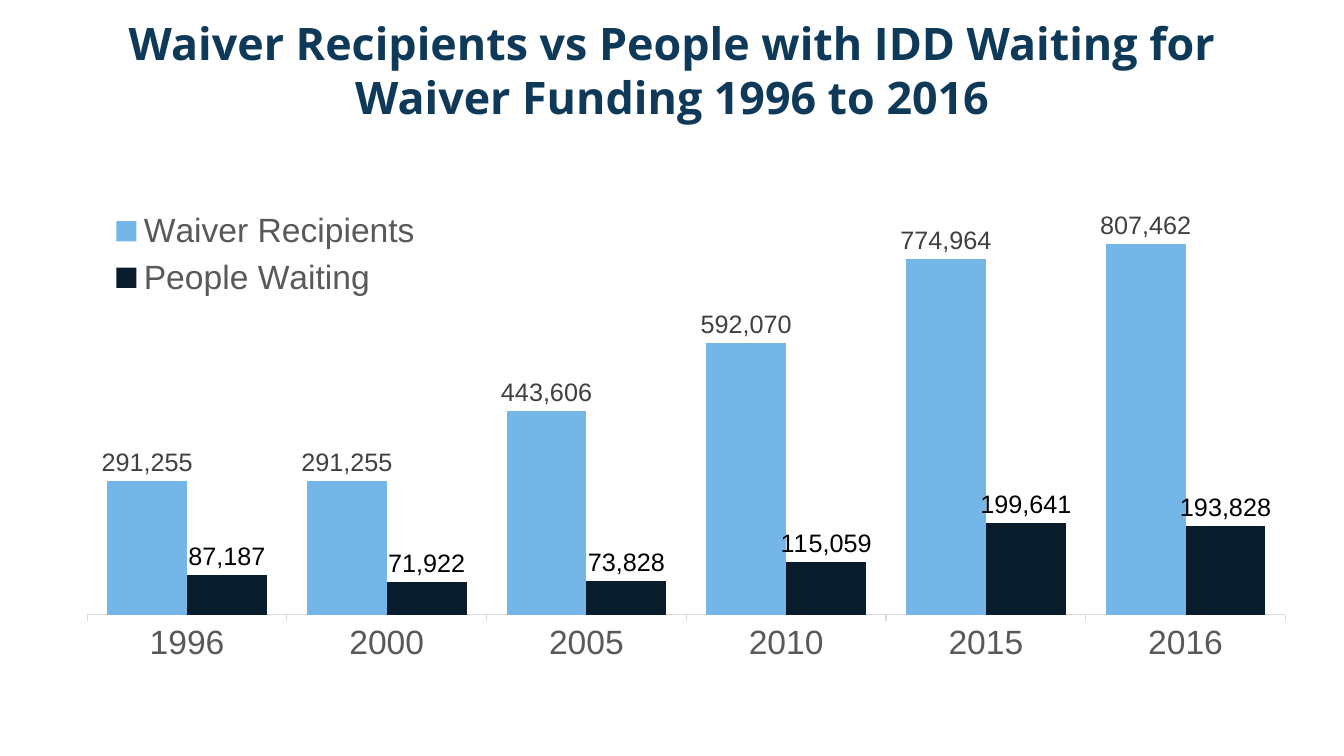
"""Build the slide comparing waiver recipients with people waiting for funding."""
from dataclasses import dataclass

from lxml.etree import SubElement
from pptx import Presentation
from pptx.chart.chart import Chart
from pptx.chart.data import CategoryChartData
from pptx.dml.color import RGBColor
from pptx.enum.chart import XL_CHART_TYPE as ChartType
from pptx.enum.chart import XL_LABEL_POSITION as LabelPosition
from pptx.enum.chart import XL_LEGEND_POSITION as LegendPosition
from pptx.enum.chart import XL_TICK_MARK as TickMark
from pptx.enum.text import MSO_ANCHOR as Anchor
from pptx.enum.text import PP_ALIGN as Align
from pptx.oxml.ns import qn
from pptx.slide import Slide
from pptx.text.text import Font
from pptx.util import Pt

YEARS = ("1996", "2000", "2005", "2010", "2015", "2016")
GRAY = "595959"


@dataclass(frozen=True)
class Box:
    left: float
    top: float
    width: float
    height: float


@dataclass(frozen=True)
class Group:
    name: str
    people: tuple[int, ...]
    fill: str
    label_color: str


GROUPS = (
    Group("Waiver Recipients", (291255, 291255, 443606, 592070, 774964, 807462), "74B6E8", "404040"),
    Group("People Waiting", (87187, 71922, 73828, 115059, 199641, 193828), "081C2C", "000000"),
)


def rgb(color: str) -> RGBColor:
    return RGBColor.from_string(color)


def style_font(font: Font, size: float, color: str, name: str = "Arial", bold: bool = False) -> None:
    font.size = Pt(size)
    font.name = name
    font.bold = bold
    font.color.rgb = rgb(color)


def add_text(slide: Slide, text: str, box: Box, *, size: float, color: str, name: str, bold: bool) -> None:
    shape = slide.shapes.add_textbox(Pt(box.left), Pt(box.top), Pt(box.width), Pt(box.height))
    frame = shape.text_frame
    frame.word_wrap = True
    frame.vertical_anchor = Anchor.MIDDLE
    paragraph = frame.paragraphs[0]
    paragraph.alignment = Align.CENTER
    run = paragraph.add_run()
    run.text = text
    style_font(run.font, size, color, name, bold)


def place_in_chart(chart: Chart, tag: str, box: Box, inner: bool = False) -> None:
    parent = chart.element.find(".//" + qn(tag))
    for layout in parent.findall(qn("c:layout")):
        parent.remove(layout)
    layout = SubElement(parent, qn("c:layout"))
    manual = SubElement(layout, qn("c:manualLayout"))
    settings = {"layoutTarget": "inner"} if inner else {}
    settings |= {"xMode": "edge", "yMode": "edge"}
    settings |= {"x": box.left, "y": box.top, "w": box.width, "h": box.height}
    for key, value in settings.items():
        SubElement(manual, qn(f"c:{key}")).set("val", str(value))
    parent.insert(0 if inner else 1, layout)


def add_waiver_chart(slide: Slide, box: Box) -> None:
    data = CategoryChartData(number_format="#,##0")
    data.categories = YEARS
    for group in GROUPS:
        data.add_series(group.name, group.people)
    frame = slide.shapes.add_chart(
        ChartType.COLUMN_CLUSTERED, Pt(box.left), Pt(box.top), Pt(box.width), Pt(box.height), data
    )
    chart = frame.chart
    chart.has_title = False
    style_font(chart.font, 16, "000000")

    plot = chart.plots[0]
    plot.gap_width = 50
    plot.overlap = 0
    plot.vary_by_categories = False
    for series, group in zip(plot.series, GROUPS):
        series.format.fill.solid()
        series.format.fill.fore_color.rgb = rgb(group.fill)
        labels = series.data_labels
        labels.show_value = True
        labels.position = LabelPosition.OUTSIDE_END
        labels.number_format = "#,##0"
        labels.number_format_is_linked = False
        style_font(labels.font, 18, group.label_color)

    year_axis = chart.category_axis
    year_axis.major_tick_mark = TickMark.OUTSIDE
    year_axis.format.line.color.rgb = rgb("D9D9D9")
    year_axis.format.line.width = Pt(0.75)
    style_font(year_axis.tick_labels.font, 24, GRAY)

    people_axis = chart.value_axis
    people_axis.minimum_scale = 0
    people_axis.maximum_scale = 900000
    people_axis.has_major_gridlines = False
    people_axis.visible = False

    chart.has_legend = True
    chart.legend.position = LegendPosition.BOTTOM
    chart.legend.include_in_layout = False
    style_font(chart.legend.font, 24, GRAY)
    place_in_chart(chart, "c:plotArea", Box(0.016, 0.035, 0.968, 0.814), inner=True)
    place_in_chart(chart, "c:legend", Box(0.03, 0.04, 0.26, 0.2))


def main() -> None:
    presentation = Presentation()
    presentation.slide_width = Pt(960)
    presentation.slide_height = Pt(540)
    slide = presentation.slides.add_slide(presentation.slide_layouts[6])
    add_waiver_chart(slide, Box(48.2, 131, 884.2, 362.9))
    add_text(
        slide,
        "Waiver Recipients vs People with IDD Waiting for Waiver Funding 1996 to 2016",
        Box(41.8, 7.2, 877, 85),
        size=32,
        color="0F3959",
        name="Open Sans",
        bold=True,
    )
    presentation.save("out.pptx")


if __name__ == "__main__":
    main()
